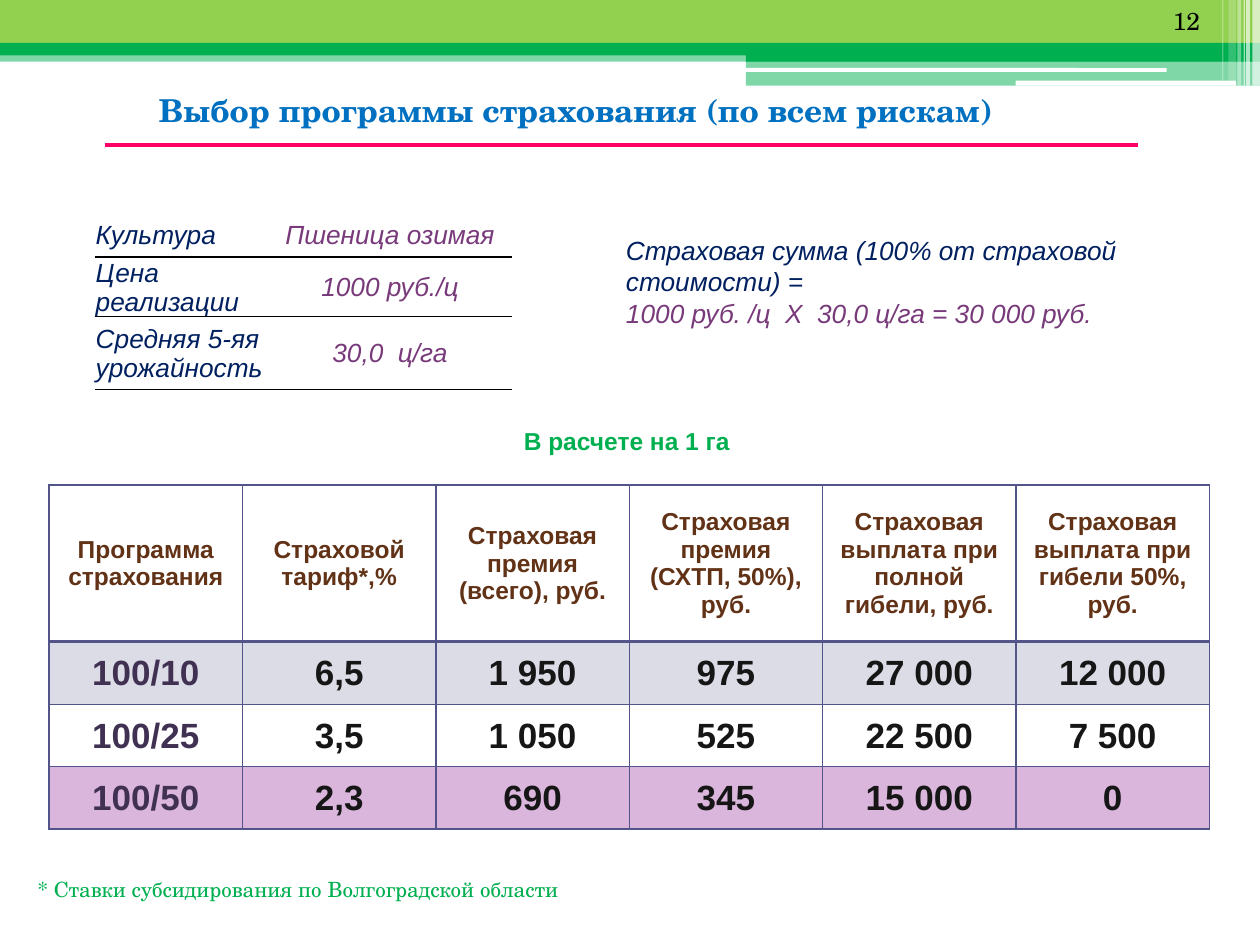
"""Builds the slide on choosing a crop insurance programme."""
from dataclasses import dataclass

from lxml import etree
from pptx import Presentation, util as u
from pptx.dml.color import RGBColor
from pptx.enum import shapes, text
from pptx.oxml.ns import qn

LEFT, CENTER = text.PP_ALIGN.LEFT, text.PP_ALIGN.CENTER
TOP, MIDDLE = text.MSO_ANCHOR.TOP, text.MSO_ANCHOR.MIDDLE
PLAIN_TABLE = "{2D5ABB26-0587-4C30-8999-92F81FD0307C}"


@dataclass(frozen=True)
class Theme:
    """Colours, fonts and type sizes of the slide."""
    lime: str = "92D050"
    green: str = "00B050"
    white: str = "FFFFFF"
    black: str = "000000"
    blue: str = "0070C0"
    navy: str = "002060"
    plum: str = "783A7A"
    pink: str = "FF0066"
    brown: str = "623217"
    violet: str = "403152"
    ink: str = "161616"
    slate: str = "53548A"
    lilac: str = "DBB6DC"
    serif: str = "TeX Gyre Schola"
    sans: str = "Arial"
    title: int = 18
    note: int = 12
    label: int = 14
    body: int = 15
    figure: int = 20


class SlideBuilder:
    """Draws elements on one slide, on a grid of 100 columns by 75 rows."""

    def __init__(self, presentation, theme):
        """Keeps the theme and opens a slide with a title."""
        self.theme = theme
        self.column = presentation.slide_width / 100
        self.row = presentation.slide_height / 75
        self.slide = presentation.slides.add_slide(presentation.slide_layouts[5])

    def box(self, left, top, width, height):
        """Turns grid places into slide lengths."""
        return (round(left * self.column), round(top * self.row),
                round(width * self.column), round(height * self.row))

    def apply(self, target, values):
        """Sets attributes from a dict of format values."""
        for name, value in values.items():
            setattr(target, name, value)

    def paint(self, fill, color, opacity=100):
        """Gives a fill one colour, see-through if asked."""
        fill.solid()
        fill.fore_color.rgb = RGBColor.from_string(color)
        if opacity < 100:
            node = fill._xPr.find(f"{qn('a:solidFill')}/{qn('a:srgbClr')}")
            etree.SubElement(node, qn("a:alpha"), val=str(opacity * 1000))

    def add_words(self, paragraph, words, size, color, align=LEFT, font=None, **style):
        """Adds one formatted run to a paragraph."""
        paragraph.alignment = align
        run = paragraph.add_run()
        run.text = words
        self.apply(run.font, {"size": u.Pt(size), "name": font or self.theme.sans, **style})
        run.font.color.rgb = RGBColor.from_string(color)

    def title(self, place, words, **style):
        """Moves and fills the title placeholder."""
        shape = self.slide.shapes.title
        self.apply(shape, dict(zip(("left", "top", "width", "height"), self.box(*place))))
        self.apply(shape.text_frame, {"word_wrap": True, "vertical_anchor": MIDDLE,
                                      "auto_size": text.MSO_AUTO_SIZE.NONE})
        self.add_words(shape.text_frame.paragraphs[0], words, **style)

    def label(self, place, *lines, **style):
        """Adds a text box of (words, colour) lines."""
        frame = self.slide.shapes.add_textbox(*self.box(*place)).text_frame
        self.apply(frame, {"word_wrap": True, "vertical_anchor": TOP})
        for index, (words, color) in enumerate(lines):
            paragraph = frame.add_paragraph() if index else frame.paragraphs[0]
            self.add_words(paragraph, words, color=color, **style)

    def band(self, place, color, opacity=100, kind=shapes.MSO_SHAPE.RECTANGLE):
        """Adds a filled bar without outline."""
        shape = self.slide.shapes.add_shape(kind, *self.box(*place))
        shape.shadow.inherit = False
        shape.line.fill.background()
        self.paint(shape.fill, color, opacity)

    def rule(self, left, right, top, color, weight):
        """Adds a level line."""
        x, y, width, _ = self.box(left, top, right - left, 0)
        line = self.slide.shapes.add_connector(shapes.MSO_CONNECTOR.STRAIGHT, x, y, x + width, y)
        line.line.color.rgb = RGBColor.from_string(color)
        line.line.width = u.Pt(weight)
        etree.SubElement(line._element.spPr, qn("a:effectLst"))

    def table(self, place, columns, rows):
        """Adds an unstyled table with given column and row sizes."""
        frame = self.slide.shapes.add_table(len(rows), len(columns), *self.box(*place))
        table = frame.table
        self.apply(table, {"first_row": False, "horz_banding": False})
        table._tbl.tblPr.find(qn("a:tableStyleId")).text = PLAIN_TABLE
        for column, width in zip(table.columns, columns):
            column.width = round(width * self.column)
        for row, height in zip(table.rows, rows):
            row.height = round(height * self.row)
        return table

    def cell(self, cell, words, borders, fill=None, tight=True, **style):
        """Fills one table cell; borders map a side to colour and weight."""
        properties = cell._tc.get_or_add_tcPr()
        for side in "LRTB":
            if side in borders:
                color, weight = borders[side]
                line = etree.SubElement(properties, qn(f"a:ln{side}"), w=str(u.Pt(weight)))
                solid = etree.SubElement(line, qn("a:solidFill"))
                etree.SubElement(solid, qn("a:srgbClr"), val=color)
        if fill:
            self.paint(cell.fill, *fill)
        else:
            cell.fill.background()
        cell.vertical_anchor = MIDDLE
        if tight:
            edge = u.Inches(0.01)
            self.apply(cell, {"margin_left": edge, "margin_right": edge,
                              "margin_top": edge, "margin_bottom": 0})
        self.add_words(cell.text_frame.paragraphs[0], words, **style)


def draw_header(builder, theme):
    """Draws the green bands and the light stripes at their right end."""
    rounded = shapes.MSO_SHAPE.ROUNDED_RECTANGLE
    builder.band((0, 4, 100, 0.9), theme.green, 50)
    builder.band((0, 0, 100, 3.4), theme.lime)
    builder.band((0, 3.4, 100, 1), theme.green)
    builder.band((59.2, 3.9, 40.8, 1), theme.green)
    builder.band((59.2, 4.8, 40.8, 2), theme.green, 50)
    builder.band((59.1, 5.4, 33.5, 0.3), theme.white, kind=rounded)
    builder.band((80.6, 6.4, 17.5, 0.4), theme.white, kind=rounded)
    stripes = [(99.4, 0.6, 6.8, 65), (98.9, 0.3, 6.8, 65), (98.7, 0.1, 6.8, 60),
               (98.2, 0.3, 6.8, 40), (97.5, 0.6, 6.4, 20), (97, 0.1, 6.4, 30)]
    for left, width, height, opacity in stripes:
        builder.band((left, 0, width, height), theme.white, opacity)


def draw_programmes(builder, theme):
    """Draws the table that compares the programmes."""
    headings = ["Программа страхования", "Страховой тариф*,%", "Страховая премия (всего), руб.",
                "Страховая премия (СХТП, 50%), руб.", "Страховая выплата при полной гибели, руб.",
                "Страховая выплата при гибели 50%, руб."]
    figures = [("100/10", "6,5", "1 950", "975", "27 000", "12 000"),
               ("100/25", "3,5", "1 050", "525", "22 500", "7 500"),
               ("100/50", "2,3", "690", "345", "15 000", "0")]
    fills = [(theme.slate, 20), None, (theme.lilac,)]
    table = builder.table((3.9, 38.5, 92.1, 27.3), [92.1 / 6] * 6, [12.45] + [4.95] * 3)
    thin, thick = (theme.slate, 1), (theme.slate, 2)
    frame = dict.fromkeys("LRTB", thin)
    for column, heading in enumerate(headings):
        builder.cell(table.cell(0, column), heading, {**frame, "B": thick}, tight=False,
                     size=theme.label, color=theme.brown, align=CENTER, bold=True)
    for row, (values, fill) in enumerate(zip(figures, fills), 1):
        borders = {**frame, "T": thick if row == 1 else thin}
        for column, value in enumerate(values):
            builder.cell(table.cell(row, column), value, borders, fill, size=theme.figure,
                         color=theme.ink if column else theme.violet, align=CENTER, bold=True)


def draw_crop(builder, theme):
    """Draws the small table of crop facts."""
    facts = [("Культура", "Пшеница озимая"), ("Цена реализации", "1000 руб./ц"),
             ("Средняя 5-яя урожайность", "30,0  ц/га")]
    table = builder.table((7.5, 11.5, 33.1, 19.4), [13.8, 19.3], [5.4, 3.5, 4.7, 5.8])
    table.cell(0, 0).merge(table.cell(0, 1))
    for row, fact in enumerate(facts, 1):
        for column, words in enumerate(fact):
            builder.cell(table.cell(row, column), words, {"B": (theme.black, 1)},
                         size=theme.body, color=theme.plum if column else theme.navy,
                         align=CENTER if column else LEFT, italic=True)


def main():
    """Builds and saves the presentation."""
    presentation = Presentation()
    presentation.slide_width, presentation.slide_height = u.Inches(10), u.Inches(7.5)
    theme = Theme()
    builder = SlideBuilder(presentation, theme)
    draw_header(builder, theme)
    draw_programmes(builder, theme)
    draw_crop(builder, theme)
    builder.title((0.4, 6.7, 90.6, 4), "Выбор программы страхования (по всем рискам)",
                  size=theme.title, color=theme.blue, align=CENTER, font=theme.serif, bold=True)
    builder.label((34.3, 33.3, 30.9, 3.4), ("В расчете на 1 га", theme.green),
                  size=theme.label, align=CENTER, bold=True)
    builder.label((92.1, 0, 5.1, 2.8), ("12", theme.black), size=theme.label, font=theme.serif)
    builder.rule(8.3, 90.3, 11.5, theme.pink, 2.5)
    builder.label((2, 69.1, 95.3, 3), ("* Ставки субсидирования по Волгоградской области", theme.green),
                  size=theme.note, font=theme.serif)
    builder.label((48.7, 18.1, 47.4, 8.6),
                  ("Страховая сумма (100% от страховой стоимости) =", theme.navy),
                  ("1000 руб. /ц  Х  30,0 ц/га = 30 000 руб.", theme.plum),
                  size=theme.body, italic=True)
    presentation.save("out.pptx")


if __name__ == "__main__":
    main()
